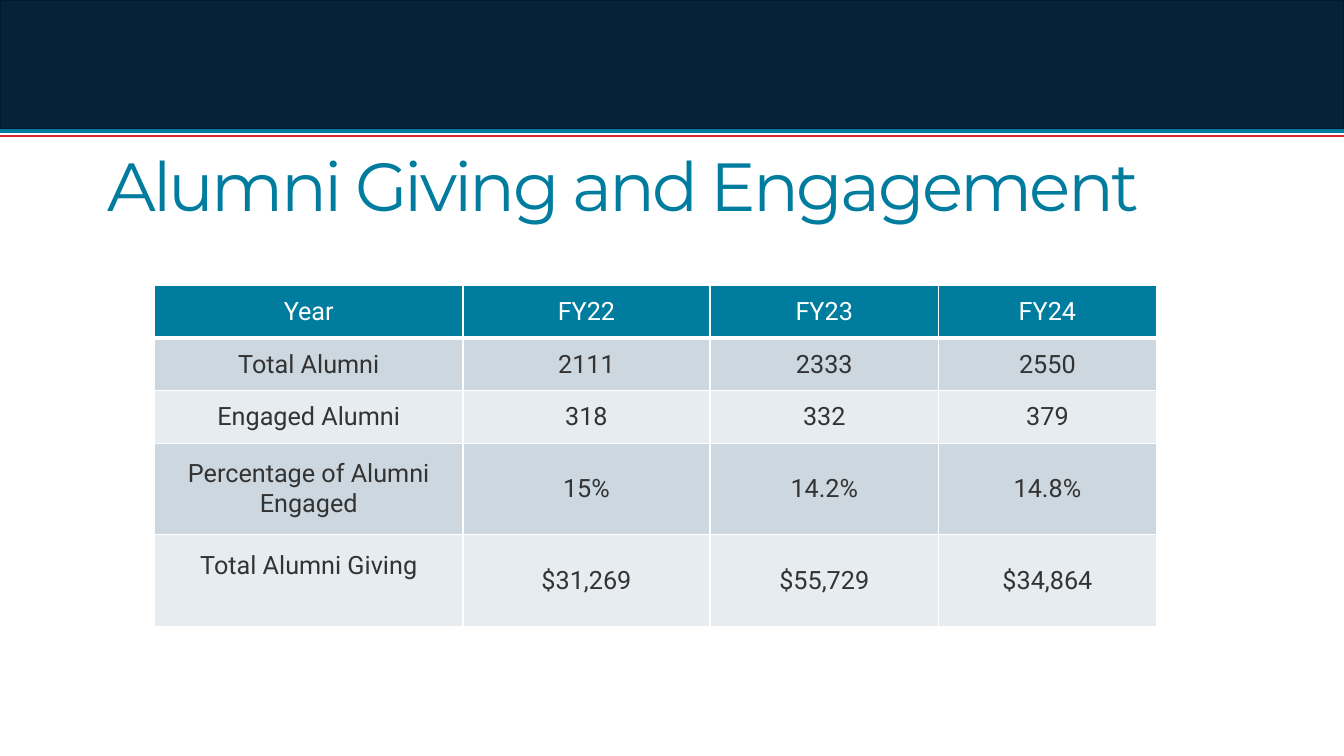
from dataclasses import dataclass

from lxml.etree import SubElement
from pptx import Presentation
from pptx.dml.color import RGBColor as RGB
from pptx.enum.shapes import MSO_CONNECTOR as CONNECTOR, MSO_SHAPE as SHAPE
from pptx.enum.text import MSO_ANCHOR as ANCHOR, PP_ALIGN as ALIGN
from pptx.oxml.ns import qn
from pptx.util import Pt


@dataclass(frozen=True)
class Theme:
    navy: str = "04233B"
    navy_edge: str = "031A2C"
    teal: str = "007D9E"
    red: str = "D9282E"
    white: str = "FFFFFF"
    ink: str = "333333"
    bands: tuple = ("CCD7DF", "E7ECF0")
    title_font: str = "Montserrat"
    table_font: str = "Roboto"
    title_size: float = 48.6
    table_size: float = 18


THEME = Theme()
SLIDE_SIZE = (960, 540)
ROWS = [
    ("Year", "FY22", "FY23", "FY24"),
    ("Total Alumni", "2111", "2333", "2550"),
    ("Engaged Alumni", "318", "332", "379"),
    ("Percentage of Alumni Engaged", "15%", "14.2%", "14.8%"),
    ("Total Alumni Giving", "$31,269", "$55,729", "$34,864"),
]
COLUMN_WIDTHS = (220.3, 176.4, 163.4, 155.4)
ROW_HEIGHTS = (37.6, 37.6, 37.6, 65.3, 65.3)


def set_font(paragraph, name, size, color):
    for attribute, value in {"name": name, "size": Pt(size)}.items():
        setattr(paragraph.font, attribute, value)
    paragraph.font.color.rgb = RGB.from_string(color)


def add_rule(slide, left, top, width, color, weight):
    rule = slide.shapes.add_connector(
        CONNECTOR.STRAIGHT, Pt(left), Pt(top), Pt(left + width), Pt(top))
    rule.line.color.rgb = RGB.from_string(color)
    rule.line.width = Pt(weight)
    SubElement(rule._element.spPr, qn("a:effectLst"))


def add_banner(slide, left, top, width, height):
    """Navy band with two rules just below it."""
    band = slide.shapes.add_shape(
        SHAPE.RECTANGLE, Pt(left), Pt(top), Pt(width), Pt(height))
    band.shadow.inherit = False
    band.fill.solid()
    band.fill.fore_color.rgb = RGB.from_string(THEME.navy)
    band.line.color.rgb = RGB.from_string(THEME.navy_edge)
    band.line.width = Pt(1)
    for gap, color, weight in ((1.4, THEME.teal, 3), (5, THEME.red, 1)):
        add_rule(slide, left, top + height + gap, width, color, weight)


def add_title(slide, left, top, width, height):
    frame = slide.shapes.add_textbox(
        Pt(left), Pt(top), Pt(width), Pt(height)).text_frame
    frame.word_wrap = True
    frame.vertical_anchor = ANCHOR.MIDDLE
    title = frame.paragraphs[0]
    title.line_spacing = 0.9
    run = title.add_run()
    run.text = "Alumni Giving and Engagement"
    set_font(run, THEME.title_font, THEME.title_size, THEME.teal)
    run.font._element.set("spc", "-200")


def add_borders(cell, weights):
    """Draw white borders; must run before the cell is filled."""
    properties = cell._tc.get_or_add_tcPr()
    for side, weight in weights.items():
        border = SubElement(properties, qn(f"a:ln{side}"), w=str(Pt(weight)))
        fill = SubElement(border, qn("a:solidFill"))
        SubElement(fill, qn("a:srgbClr"), val=THEME.white)


def fill_cell(cell, text, row):
    header = row == 0
    add_borders(cell, {"L": 1, "R": 1, "T": 1, "B": 3 if header else 1})
    cell.fill.solid()
    cell.fill.fore_color.rgb = RGB.from_string(
        THEME.teal if header else THEME.bands[(row - 1) % 2])
    cell.vertical_anchor = ANCHOR.MIDDLE
    cell.text = text
    label = cell.text_frame.paragraphs[0]
    label.alignment = ALIGN.CENTER
    set_font(label.runs[0], THEME.table_font, THEME.table_size,
             THEME.white if header else THEME.ink)


def add_giving_table(slide, left, top):
    table = slide.shapes.add_table(
        len(ROWS), len(COLUMN_WIDTHS), Pt(left), Pt(top),
        Pt(sum(COLUMN_WIDTHS)), Pt(sum(ROW_HEIGHTS))).table
    for column, width in zip(table.columns, COLUMN_WIDTHS):
        column.width = Pt(width)
    for row, (texts, height) in enumerate(zip(ROWS, ROW_HEIGHTS)):
        table.rows[row].height = Pt(height)
        for column, text in enumerate(texts):
            fill_cell(table.cell(row, column), text, row)
    # The last row label sits half a line above the middle.
    table.cell(len(ROWS) - 1, 0).margin_bottom = Pt(25)


def main():
    deck = Presentation()
    deck.slide_width, deck.slide_height = map(Pt, SLIDE_SIZE)
    slide = deck.slides.add_slide(deck.slide_layouts[6])
    add_banner(slide, 0, 0, SLIDE_SIZE[0], 92.2)
    add_giving_table(slide, 110.4, 204)
    add_title(slide, 69.8, 87.1, 820, 95.8)
    deck.save("out.pptx")


if __name__ == "__main__":
    main()
